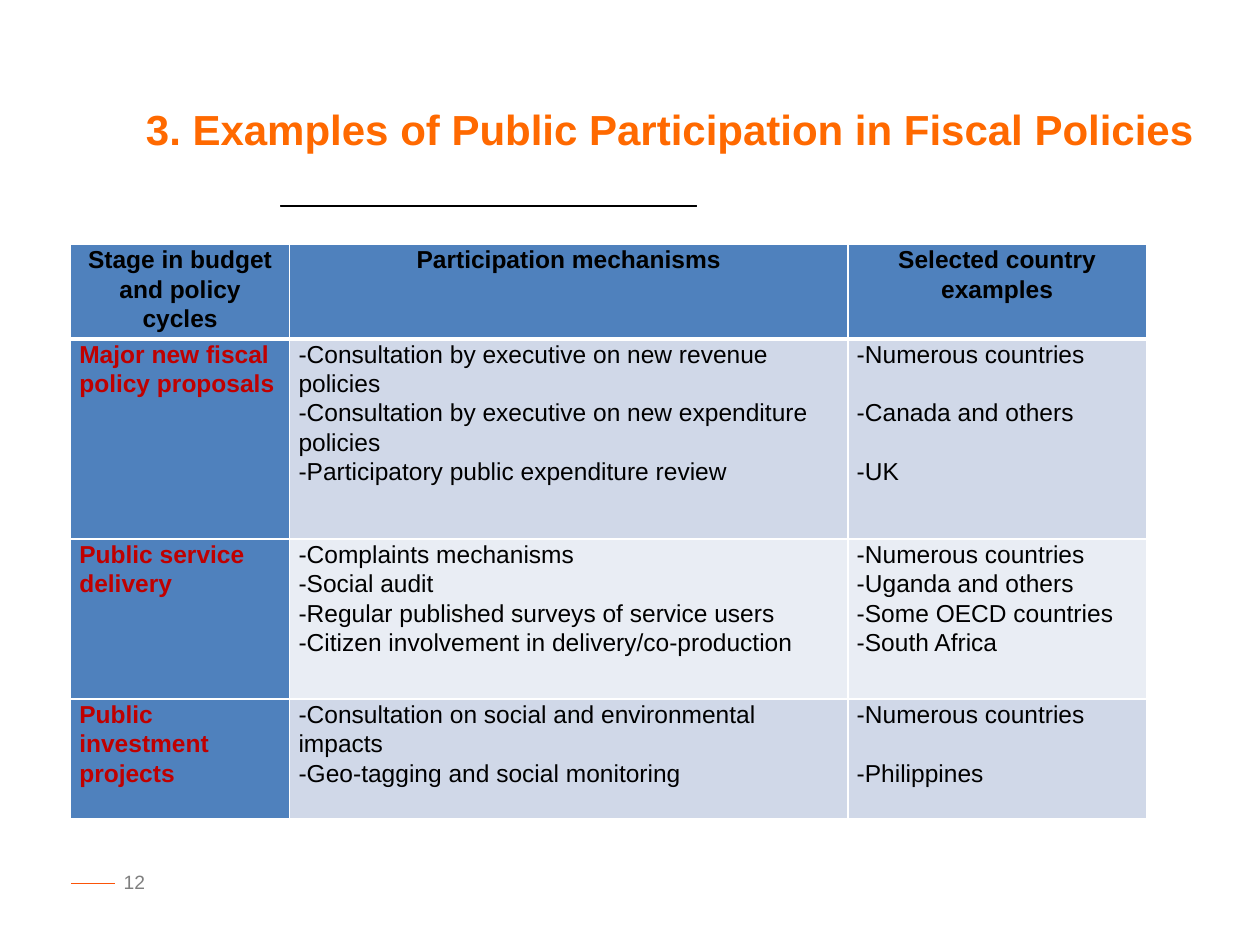
from lxml import etree
from pptx import Presentation
from pptx import util as u
from pptx.dml.color import RGBColor
from pptx.enum import shapes, text
from pptx.oxml.ns import qn

WIDTH, HEIGHT = 10, 7.5
LEFT = 0.56
BLACK, WHITE, BLUE, RED = "000000", "FFFFFF", "4F81BD", "C00000"
BANDS = ["D0D8E8", "E9EDF4"]
COLUMNS = [1.74, 4.43, 2.37]
ROWS = [0.64, 1.59, 1.27, 0.95]
SKIPPED_LINE = 16.75

HEADER = [
    "Stage in budget and policy cycles",
    "Participation mechanisms",
    "Selected country examples",
]
STAGES = [
    (
        "Major new fiscal policy proposals",
        [
            "-Consultation by executive on new revenue policies",
            "-Consultation by executive on new expenditure policies",
            "-Participatory public expenditure review",
        ],
        ["-Numerous countries", "-Canada and others", "-UK"],
        SKIPPED_LINE,
    ),
    (
        "Public service delivery",
        [
            "-Complaints mechanisms",
            "-Social audit",
            "-Regular published surveys of service users",
            "-Citizen involvement in delivery/co-production",
        ],
        ["-Numerous countries", "-Uganda and others", "-Some OECD countries", "-South Africa"],
        0,
    ),
    (
        "Public investment projects",
        [
            "-Consultation on social and environmental impacts",
            "-Geo-tagging and social monitoring",
        ],
        ["-Numerous countries", "-Philippines"],
        SKIPPED_LINE,
    ),
]


def paint(target, colour):
    target.solid()
    target.fore_color.rgb = RGBColor.from_string(colour)


def write(frame, lines, size=14, colour=BLACK, bold=False, align="LEFT", spacing=None, gap=0):
    frame.word_wrap = True
    for index, line in enumerate(lines):
        paragraph = frame.paragraphs[0] if index == 0 else frame.add_paragraph()
        paragraph.alignment = getattr(text.PP_ALIGN, align)
        paragraph.line_spacing = spacing
        paragraph.space_before = u.Pt(gap if index else 0)
        run = paragraph.add_run()
        run.text = line
        run.font.name = "Arial"
        run.font.size = u.Pt(size)
        run.font.bold = bold
        paint(run.font.fill, colour)


def add_text(slide, box, content, **style):
    shape = slide.shapes.add_textbox(*map(u.Inches, box))
    write(shape.text_frame, [content], **style)


def add_line(slide, start, end, colour):
    line = slide.shapes.add_connector(shapes.MSO_CONNECTOR.STRAIGHT, *map(u.Inches, start + end))
    paint(line.line.fill, colour)
    line.line.width = u.Pt(0.75)
    etree.SubElement(line._element.spPr, qn("a:effectLst"))


def add_bar(slide, box, colour):
    bar = slide.shapes.add_shape(shapes.MSO_SHAPE.RECTANGLE, *map(u.Inches, box))
    bar.shadow.inherit = False
    paint(bar.fill, colour)
    paint(bar.line.fill, colour)
    bar.line.width = u.Pt(0.75)


def set_borders(cell, bottom):
    properties = cell._tc.get_or_add_tcPr()
    for index, (side, width) in enumerate([("L", 1), ("R", 1), ("T", 1), ("B", bottom)]):
        border = etree.Element(qn(f"a:ln{side}"), w=str(u.Pt(width)))
        fill = etree.SubElement(border, qn("a:solidFill"))
        etree.SubElement(fill, qn("a:srgbClr"), val=WHITE)
        properties.insert(index, border)


def fill_cell(cell, lines, fill, bottom=1, **style):
    cell.margin_left = cell.margin_right = u.Inches(0.07)
    cell.margin_top = cell.margin_bottom = 0
    paint(cell.fill, fill)
    set_borders(cell, bottom)
    write(cell.text_frame, lines, spacing=1.07, **style)


def add_stage_table(slide):
    box = (LEFT, 1.94, sum(COLUMNS), sum(ROWS))
    table = slide.shapes.add_table(len(ROWS), len(COLUMNS), *map(u.Inches, box)).table
    for column, width in zip(table.columns, COLUMNS):
        column.width = u.Inches(width)
    for row, height in zip(table.rows, ROWS):
        row.height = u.Inches(height)
    for column, heading in enumerate(HEADER):
        fill_cell(table.cell(0, column), [heading], BLUE, bottom=3, bold=True, align="CENTER")
    for row, (stage, mechanisms, countries, gap) in enumerate(STAGES, start=1):
        band = BANDS[(row - 1) % 2]
        fill_cell(table.cell(row, 0), [stage], BLUE, colour=RED, bold=True)
        fill_cell(table.cell(row, 1), mechanisms, band)
        fill_cell(table.cell(row, 2), countries, band, gap=gap)


def main():
    presentation = Presentation()
    presentation.slide_width = u.Inches(WIDTH)
    presentation.slide_height = u.Inches(HEIGHT)
    slide = presentation.slides.add_slide(presentation.slide_layouts[6])
    add_text(slide, (0.5, 6.86, 0.75, 0.4), "12", size=11, colour="7F7F7F", align="RIGHT")
    add_line(slide, (0.91, 7.01), (LEFT, 7.01), "FB5308")
    add_text(
        slide,
        (1.06, 0.77, 8.68, 0.91),
        "3. Examples of Public Participation in Fiscal Policies",
        size=24,
        colour="FF6900",
        bold=True,
    )
    add_stage_table(slide)
    add_bar(slide, (2.23, 1.63, 3.3, 0.01), BLACK)
    presentation.save("out.pptx")


if __name__ == "__main__":
    main()
